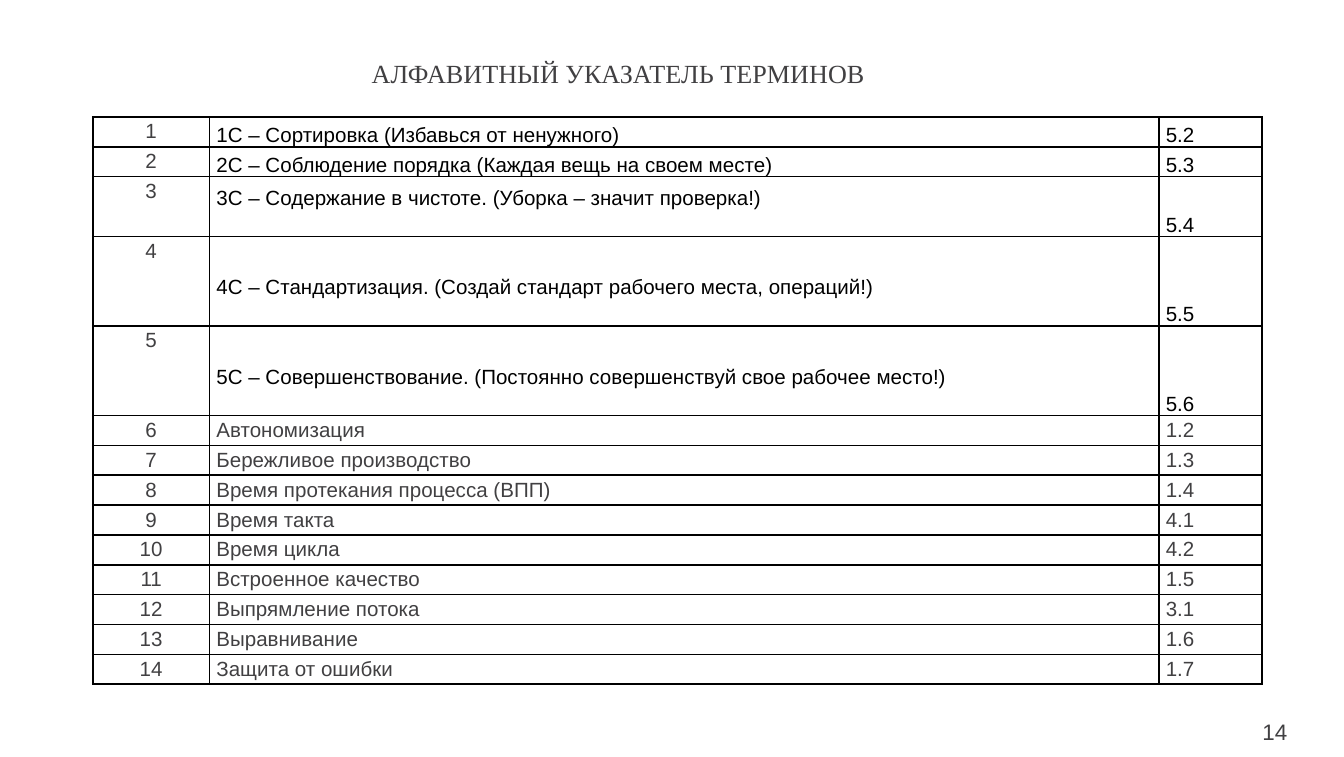
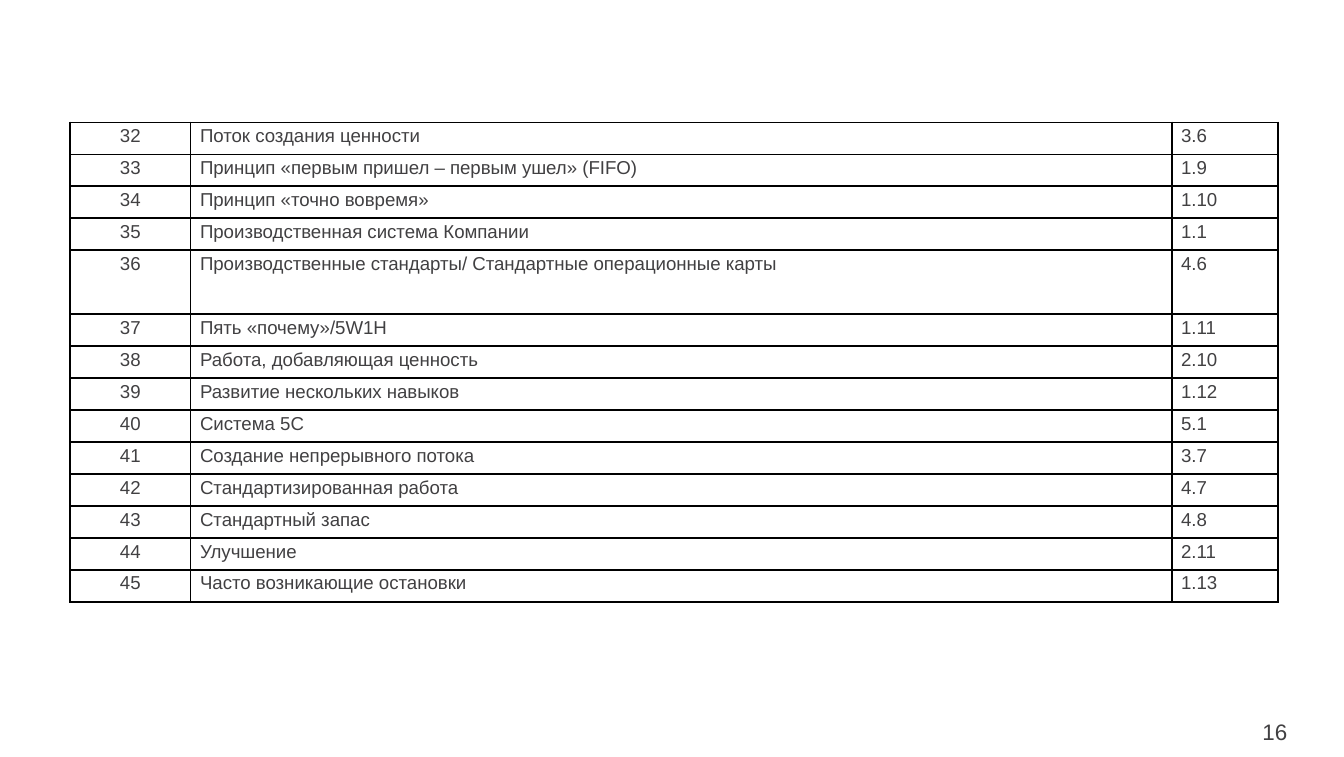
"""Builds two slides of an alphabetical index of lean production terms."""
import lxml.etree
import pptx
import pptx.dml.color
import pptx.enum.text
import pptx.oxml.ns
import pptx.util

TITLE = "АЛФАВИТНЫЙ УКАЗАТЕЛЬ ТЕРМИНОВ "
FIVE_S = [
    ("1С – Сортировка (Избавься от ненужного)", "5.2", 1),
    ("2С – Соблюдение порядка (Каждая вещь на своем месте)", "5.3", 1),
    ("3С – Содержание в чистоте. (Уборка – значит проверка!)", "5.4", 2),
    ("4С – Стандартизация. (Создай стандарт рабочего места, операций!)", "5.5", 3),
    ("5C – Совершенствование. (Постоянно совершенствуй свое рабочее место!)", "5.6", 3),
]
TERMS_A_Z = [
    ("Автономизация", "1.2", 1),
    ("Бережливое производство", "1.3", 1),
    ("Время протекания процесса (ВПП)", "1.4", 1),
    ("Время такта", "4.1", 1),
    ("Время цикла", "4.2", 1),
    ("Встроенное качество", "1.5", 1),
    ("Выпрямление потока", "3.1", 1),
    ("Выравнивание", "1.6", 1),
    ("Защита от ошибки", "1.7", 1),
]
TERMS_P_CH = [
    ("Поток создания ценности", "3.6", 1),
    ("Принцип «первым пришел – первым ушел» (FIFO)", "1.9", 1),
    ("Принцип «точно вовремя»", "1.10", 1),
    ("Производственная система Компании", "1.1", 1),
    ("Производственные стандарты/ Стандартные операционные карты", "4.6", 2),
    ("Пять «почему»/5W1H", "1.11", 1),
    ("Работа, добавляющая ценность", "2.10", 1),
    ("Развитие нескольких навыков", "1.12", 1),
    ("Система 5С", "5.1", 1),
    ("Создание непрерывного потока", "3.7", 1),
    ("Стандартизированная работа", "4.7", 1),
    ("Стандартный запас", "4.8", 1),
    ("Улучшение", "2.11", 1),
    ("Часто возникающие остановки", "1.13", 1),
]
PAGES = [
    {"number": "14", "title": TITLE, "terms": FIVE_S + TERMS_A_Z, "first": 1,
     "box": (0.69, 0.87, 8.7, 4.22), "size": 11, "inset": 0.05},
    {"number": "16", "title": None, "terms": TERMS_P_CH, "first": 32,
     "box": (0.52, 0.91, 8.99, 3.57), "size": 10, "inset": 0.07},
]
COLORS = {"text": "414042", "accent": "000000", "border": "000000", "page": "FFFFFF"}
COLUMN_SHARES = (0.1, 0.812, 0.088)
BODY_FONT, TITLE_FONT = "Arial", "Times New Roman"
LINE_SPACING = 1.15
BLANK_LINE = 0.2
CENTER = pptx.enum.text.PP_ALIGN.CENTER
LEFT = pptx.enum.text.PP_ALIGN.LEFT
BOTTOM = pptx.enum.text.MSO_ANCHOR.BOTTOM
TOP = pptx.enum.text.MSO_ANCHOR.TOP
inch = pptx.util.Inches


def write(frame, text, size, font, color, align):
    paragraph = frame.paragraphs[0]
    paragraph.text = text
    paragraph.alignment = align
    paragraph.font.size = pptx.util.Pt(size)
    paragraph.font.name = font
    paragraph.font.color.rgb = pptx.dml.color.RGBColor.from_string(COLORS[color])
    return paragraph


def add_label(slide, box, text, size, font, insets=(0.1, 0.05)):
    label = slide.shapes.add_textbox(*map(inch, box))
    frame = label.text_frame
    frame.word_wrap = True
    frame.vertical_anchor = pptx.enum.text.MSO_ANCHOR.MIDDLE
    frame.margin_left = frame.margin_right = inch(insets[0])
    frame.margin_top = frame.margin_bottom = inch(insets[1])
    write(frame, text, size, font, "text", CENTER)
    return frame


def add_borders(cell):
    properties = cell._tc.get_or_add_tcPr()
    qn = pptx.oxml.ns.qn
    for position, side in enumerate(("lnL", "lnR", "lnT", "lnB")):
        border = lxml.etree.Element(qn("a:" + side), w=str(pptx.util.Pt(1)))
        fill = lxml.etree.SubElement(border, qn("a:solidFill"))
        lxml.etree.SubElement(fill, qn("a:srgbClr"), val=COLORS["border"])
        properties.insert(position, border)


def fill_cell(cell, text, column, page, is_five_s, lines):
    cell.fill.background()
    add_borders(cell)
    cell.margin_left = cell.margin_right = inch(page["inset"])
    cell.margin_top = cell.margin_bottom = 0
    accented = is_five_s and column > 0
    cell.vertical_anchor = BOTTOM if accented else TOP
    if accented and column == 1 and lines > 1:
        cell.margin_bottom = inch(BLANK_LINE)
    paragraph = write(cell.text_frame, text, page["size"], BODY_FONT,
                      "accent" if accented else "text", LEFT if column else CENTER)
    paragraph.line_spacing = LINE_SPACING
    if column and not accented:
        paragraph.space_after = pptx.util.Pt(10)


def add_index(slide, page):
    terms = page["terms"]
    width, height = page["box"][2:]
    index = slide.shapes.add_table(len(terms), 3, *map(inch, page["box"])).table
    index.first_row = index.horz_banding = False
    for column, share in zip(index.columns, COLUMN_SHARES):
        column.width = inch(width * share)
    line_height = height / sum(lines for _, _, lines in terms)
    for row, (term, section, lines) in enumerate(terms):
        index.rows[row].height = inch(line_height * lines)
        is_five_s = (term, section, lines) in FIVE_S
        for column, text in enumerate((str(page["first"] + row), term, section)):
            fill_cell(index.cell(row, column), text, column, page, is_five_s, lines)


def main():
    deck = pptx.Presentation()
    deck.slide_width, deck.slide_height = inch(10), inch(5.63)
    for page in PAGES:
        slide = deck.slides.add_slide(deck.slide_layouts[6])
        slide.background.fill.solid()
        slide.background.fill.fore_color.rgb = pptx.dml.color.RGBColor.from_string(COLORS["page"])
        add_label(slide, (9.09, 5.29, 0.79, 0.3), page["number"], 12, BODY_FONT, (0.07, 0.04))
        add_index(slide, page)
        if page["title"]:
            heading = add_label(slide, (1.89, 0.37, 5.47, 0.34), page["title"], 14, TITLE_FONT)
            heading.auto_size = pptx.enum.text.MSO_AUTO_SIZE.SHAPE_TO_FIT_TEXT
    deck.save("out.pptx")


if __name__ == "__main__":
    main()
